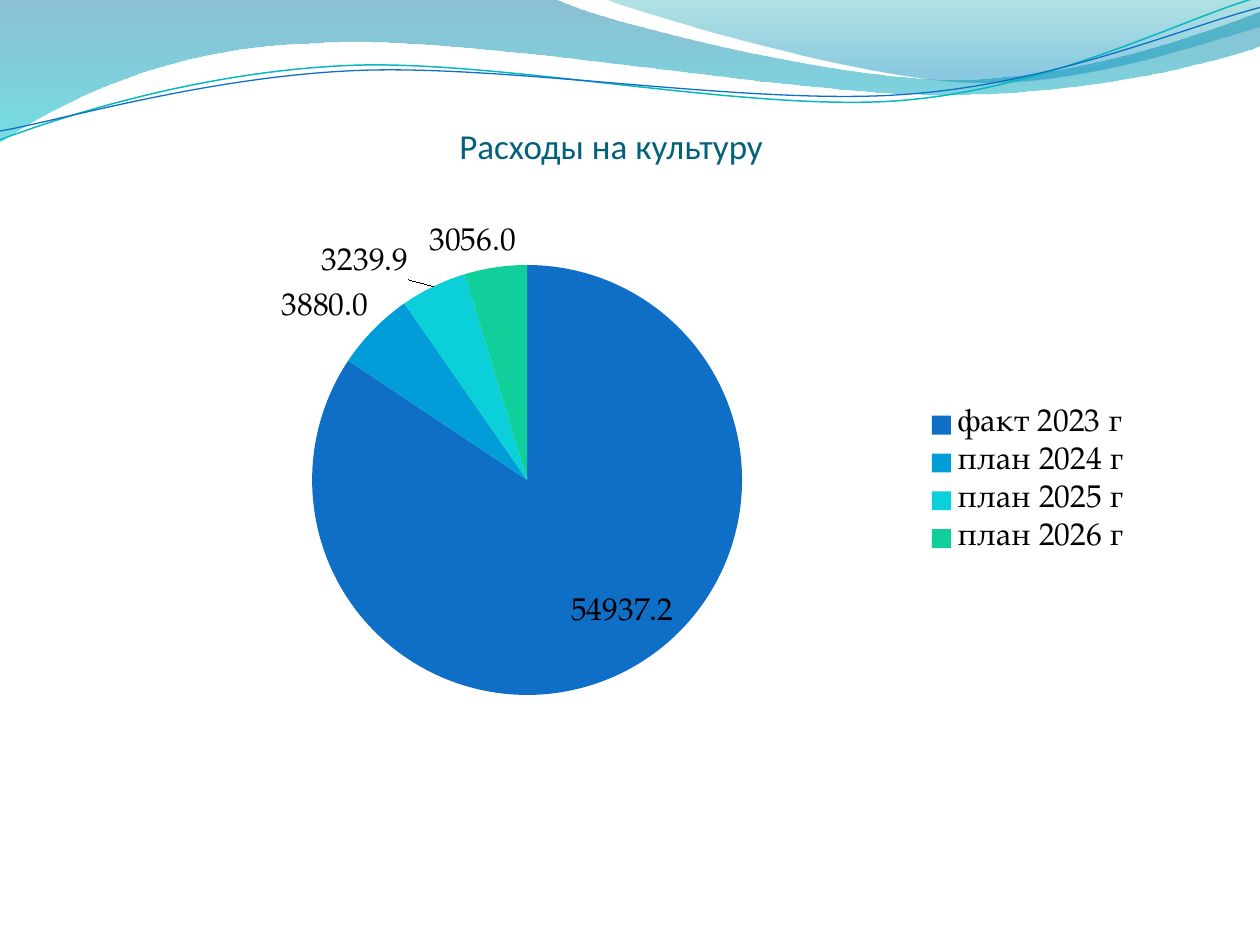
"""Builds a slide with a pie chart of culture spending under a wavy header."""
from dataclasses import dataclass
from math import cos, radians, sin

from lxml.etree import SubElement
from pptx import Presentation
from pptx.chart.data import CategoryChartData
from pptx.dml.color import RGBColor
from pptx.enum.chart import XL_CHART_TYPE, XL_LABEL_POSITION, XL_LEGEND_POSITION
from pptx.enum.text import MSO_ANCHOR, PP_ALIGN
from pptx.oxml.ns import qn
from pptx.util import Inches, Pt

COLUMNS, ROWS = 100, 75
CELL = Inches(10) // COLUMNS
TILT = 2.7
FONTS = {"title": "Calibri", "chart": "TeX Gyre Pagella"}
COLORS = {
    "title": "04617B", "text": "000000",
    "deep": "0074A1", "aqua": "00C6CF", "teal": "00A1A9", "sky": "008BBF",
    "teal line": "0AB8BF", "blue line": "0F6FC6",
    "fact 2023": "0F6FC6", "plan 2024": "009DD9",
    "plan 2025": "0BD0D9", "plan 2026": "10CF9B",
}
Point = tuple[float, float]


@dataclass
class Stop:
    position: float
    color: str
    opacity: int


@dataclass
class Wave:
    start: Point
    pieces: list[tuple[Point, ...]]


@dataclass
class Band(Wave):
    stops: tuple[Stop, Stop]


@dataclass
class Ripple(Wave):
    color: str
    width: float
    pivot: Point


@dataclass
class Slice:
    label: str
    value: float
    color: str


BANDS = [
    Band((-0.1, 0), [
        ((44, -0.1),),
        ((47.6, 1.7), (66.4, 6.3), (75.8, 6.3)),
        ((85.3, 6.3), (95.8, 2.6), (100, 0.9)),
        ((100.1, 3.6),),
        ((98.3, 4.4), (87, 7.6), (74.6, 7.5)),
        ((62.2, 7.5), (38.2, 2.8), (25.7, 3.4)),
        ((12.9, 3.6), (4.6, 8.3), (-0.1, 11.3)),
        ((-0.1, 0),),
    ], (Stop(0, "deep", 45), Stop(1, "aqua", 55))),
    Band((47.9, -0.1), [
        ((50.9, 1.1), (68.2, 6.2), (76.9, 6.5)),
        ((85.6, 6.9), (96.1, 3.2), (100, 2.1)),
        ((100, 0),),
        ((47.9, -0.1),),
    ], (Stop(0, "teal", 30), Stop(0.8, "sky", 45))),
]
RIPPLES = [
    Ripple((0, 11.1), [
        ((4.8, 9.3), (15.8, 5.7), (27.7, 5.2)),
        ((39.5, 4.7), (59.3, 8.9), (71.3, 8)),
        ((83.3, 7.1), (93.8, 1.5), (99.8, -0.2)),
    ], "teal line", 0.85, (50, 5.75)),
    Ripple((0, 10.4), [
        ((4.7, 9.6), (16.4, 6.1), (28.3, 5.6)),
        ((40.3, 5.1), (59.7, 8.4), (71.7, 7.5)),
        ((83.6, 6.7), (94.1, 2.1), (100, 0.6)),
    ], "blue line", 0.75, (50, 5.9)),
]
SLICES = [
    Slice("факт 2023 г", 54937.2, "fact 2023"),
    Slice("план 2024 г", 3880, "plan 2024"),
    Slice("план 2025 г", 3239.9, "plan 2025"),
    Slice("план 2026 г", 3056, "plan 2026"),
]
PLOT = {"x": 0.075, "y": 0.095, "w": 0.663, "h": 0.803}


def cells(*counts: float) -> list[int]:
    """Turns counts of grid cells into lengths."""
    return [round(count * CELL) for count in counts]


def color(name: str) -> RGBColor:
    """Looks a colour up by name."""
    return RGBColor.from_string(COLORS[name])


def turn(point: Point, pivot: Point) -> Point:
    """Turns a point clockwise about a pivot by the tilt."""
    angle = radians(TILT)
    across, down = point[0] - pivot[0], point[1] - pivot[1]
    return (pivot[0] + across * cos(angle) - down * sin(angle),
            pivot[1] + across * sin(angle) + down * cos(angle))


def draw_wave(page, points: list[Point], pieces: list[tuple[Point, ...]], closed: bool):
    """Draws an outline whose three-point pieces are Bezier curves."""
    corners = [cells(*point) for point in points]
    builder = page.shapes.build_freeform(*corners[0])
    builder.add_line_segments(corners[1:], close=closed)
    shape = builder.convert_to_shape()
    shape.shadow.inherit = False
    segments = iter(list(shape.element.iter(qn("a:lnTo"))))
    for piece in pieces:
        first, *others = [next(segments) for _ in piece]
        if others:
            first.tag = qn("a:cubicBezTo")
        for other in others:
            first.append(other[0])
            other.getparent().remove(other)
    return shape


def draw_band(page, band: Band) -> None:
    """Draws a translucent gradient band."""
    points = [band.start, *(point for piece in band.pieces for point in piece)]
    shape = draw_wave(page, points, band.pieces, closed=True)
    shape.line.fill.background()
    shape.fill.gradient()
    shape.fill.gradient_angle = 270
    for target, stop in zip(shape.fill.gradient_stops, band.stops):
        target.position = stop.position
        target.color.rgb = color(stop.color)
    tints = shape.element.spPr.iter(qn("a:srgbClr"))
    for tint, stop in zip(tints, band.stops):
        SubElement(tint, qn("a:alpha"), val=str(stop.opacity * 1000))


def draw_ripple(page, ripple: Ripple) -> None:
    """Draws a thin tilted wavy line."""
    points = [ripple.start, *(point for piece in ripple.pieces for point in piece)]
    level = [turn(point, ripple.pivot) for point in points]
    shape = draw_wave(page, level, ripple.pieces, closed=False)
    shape.rotation = -TILT
    shape.fill.background()
    shape.line.color.rgb = color(ripple.color)
    shape.line.width = Pt(ripple.width)


def draw_title(page, text: str) -> None:
    """Writes the centred title."""
    box = page.shapes.add_textbox(*cells(11.4, 6, 74.2, 7.2))
    frame = box.text_frame
    frame.word_wrap = True
    frame.vertical_anchor = MSO_ANCHOR.BOTTOM
    frame.margin_left = frame.margin_right = frame.margin_bottom = 0
    para = frame.paragraphs[0]
    para.alignment = PP_ALIGN.CENTER
    span = para.add_run()
    span.text = text
    span.font.name = FONTS["title"]
    span.font.size = Pt(20)
    span.font.color.rgb = color("title")


def place_plot(chart) -> None:
    """Fixes the inner plot area as shares of the chart."""
    area = chart.element.find(".//" + qn("c:plotArea"))
    layout = area.find(qn("c:layout"))
    if layout is None:
        layout = SubElement(area, qn("c:layout"))
        area.insert(0, layout)
    manual = SubElement(layout, qn("c:manualLayout"))
    SubElement(manual, qn("c:layoutTarget"), val="inner")
    for axis in "xy":
        SubElement(manual, qn(f"c:{axis}Mode"), val="edge")
    for side, share in PLOT.items():
        SubElement(manual, qn(f"c:{side}"), val=str(share))


def draw_pie(page, slices: list[Slice]) -> None:
    """Draws the pie chart with value labels and a legend."""
    data = CategoryChartData(number_format="0.0")
    data.categories = [item.label for item in slices]
    data.add_series("Series 1", [item.value for item in slices])
    chart = page.shapes.add_chart(XL_CHART_TYPE.PIE, *cells(8.3, 17, 82.5, 42.5), data).chart
    chart.has_title = False
    chart.font.name, chart.font.size = FONTS["chart"], Pt(18)
    chart.font.color.rgb = color("text")
    chart.has_legend = True
    chart.legend.position = XL_LEGEND_POSITION.RIGHT
    chart.legend.include_in_layout = False
    plot = chart.plots[0]
    plot.vary_by_categories = True
    for index, item in enumerate(slices):
        fill = plot.series[0].points[index].format.fill
        fill.solid()
        fill.fore_color.rgb = color(item.color)
    labels = plot.series[0].data_labels
    labels.show_value = True
    labels.number_format, labels.number_format_is_linked = "0.0", False
    labels.position = XL_LABEL_POSITION.BEST_FIT
    place_plot(chart)


def main() -> None:
    """Builds and saves the deck."""
    deck = Presentation()
    deck.slide_width, deck.slide_height = cells(COLUMNS, ROWS)
    page = deck.slides.add_slide(deck.slide_layouts[6])
    for band in BANDS:
        draw_band(page, band)
    for ripple in RIPPLES:
        draw_ripple(page, ripple)
    draw_title(page, "Расходы на культуру")
    draw_pie(page, SLICES)
    deck.save("out.pptx")


if __name__ == "__main__":
    main()
